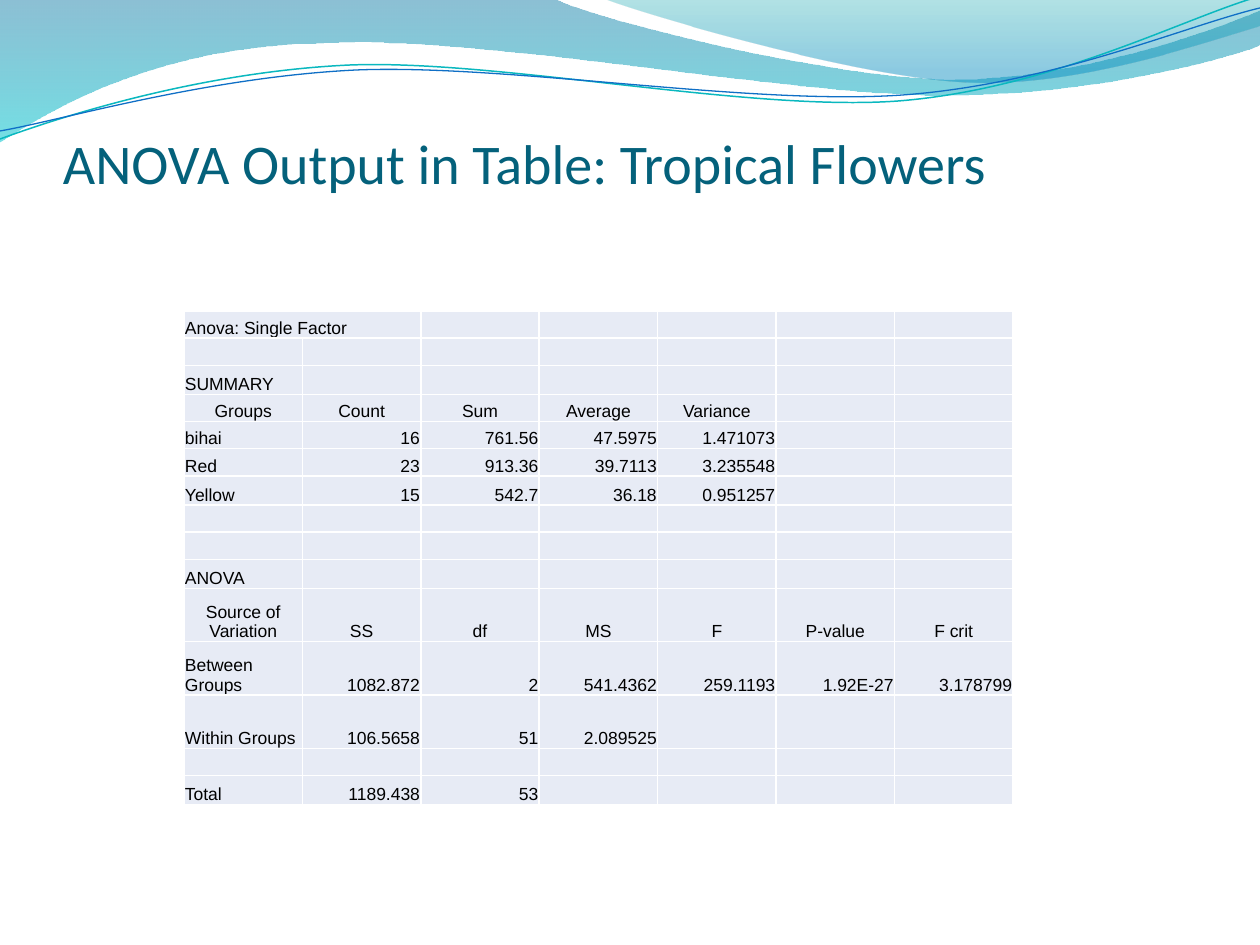
from lxml import etree
from pptx import Presentation
from pptx.dml.color import RGBColor
from pptx.enum.text import MSO_ANCHOR, PP_ALIGN
from pptx.oxml import parse_xml
from pptx.oxml.ns import nsdecls, qn
from pptx.util import Emu, Pt

BOTTOM = MSO_ANCHOR.BOTTOM
LEFT, CENTER, RIGHT = PP_ALIGN.LEFT, PP_ALIGN.CENTER, PP_ALIGN.RIGHT

PX = 914400 / 126

COLORS = {
    "title": "04617B",
    "text": "000000",
    "cell": "E7EBF5",
    "border": "FFFFFF",
    "teal_line": "0AB8BF",
    "blue_line": "0F6FC6",
    "deep_blue": "0074A1",
    "cyan": "00C6CF",
    "teal": "00A1A9",
    "sky": "008BBF",
}

# Each path is a list of steps: one point is a move or line, three a Bézier curve.
# Gradient stops are (position %, colour, opacity %).
WAVES = [
    ([[(0, 0)], [(554, -1)],
      [(600, 21), (837, 79), (955, 79)], [(1075, 79), (1207, 33), (1260, 11)],
      [(1261, 45)],
      [(1239, 55), (1096, 96), (940, 95)], [(784, 95), (481, 35), (324, 43)],
      [(163, 45), (58, 105), (-1, 142)]],
     [(0, "deep_blue", 45), (100, "cyan", 55)]),
    ([[(604, -1)],
      [(641, 14), (859, 78), (969, 82)], [(1079, 87), (1211, 40), (1260, 26)],
      [(1260, 0)]],
     [(0, "teal", 30), (80, "sky", 45)]),
]
STRANDS = [
    ([[(0, 139)], [(60, 117), (199, 72), (349, 65)],
      [(498, 59), (747, 112), (898, 101)], [(1050, 89), (1182, 19), (1257, -3)]],
     "teal_line", 0.85),
    ([[(0, 131)], [(59, 121), (207, 77), (357, 70)],
      [(508, 64), (752, 106), (903, 95)], [(1053, 84), (1185, 26), (1260, 8)]],
     "blue_line", 0.75),
]

SMALL, MEDIUM, TALL = 27, 29, 53
ROWS = [
    (SMALL, ["Anova: Single Factor"]),
    (SMALL, []),
    (MEDIUM, ["SUMMARY"]),
    (SMALL, ["Groups", "Count", "Sum", "Average", "Variance"]),
    (SMALL, ["bihai", "16", "761.56", "47.5975", "1.471073"]),
    (SMALL, ["Red", "23", "913.36", "39.7113", "3.235548"]),
    (MEDIUM, ["Yellow", "15", "542.7", "36.18", "0.951257"]),
    (SMALL, []),
    (SMALL, []),
    (MEDIUM, ["ANOVA"]),
    (TALL, ["Source of Variation", "SS", "df", "MS", "F", "P-value", "F crit"]),
    (TALL, ["Between Groups", "1082.872", "2", "541.4362", "259.1193", "1.92E-27", "3.178799"]),
    (TALL, ["Within Groups", "106.5658", "51", "2.089525"]),
    (SMALL, []),
    (MEDIUM, ["Total", "1189.438", "53"]),
]
HEADINGS = ("Groups", "Source of Variation")
COLUMN_COUNT = 7


def px(value):
    return Emu(round(value * PX))


def rgb(name):
    return RGBColor.from_string(COLORS[name])


def style_span(span, font, size, color):
    span.font.name = font
    span.font.size = Pt(size)
    span.font.color.rgb = rgb(color)


def bend_segments(shape, path):
    """Join the three line segments of each curve step into one Bézier segment."""
    segments = iter(list(shape._element.iter(qn("a:lnTo"))))
    for step in path[1:]:
        lines = [next(segments) for _ in step]
        if len(step) == 3:
            curve = etree.Element(qn("a:cubicBezTo"))
            lines[0].addprevious(curve)
            for line in lines:
                curve.append(line[0])
                line.getparent().remove(line)


def add_outline(page, box, path, close):
    left, top = box[:2]
    points = [(px(left + x), px(top + y)) for step in path for x, y in step]
    builder = page.shapes.build_freeform(*points[0])
    builder.add_line_segments(points[1:], close=close)
    shape = builder.convert_to_shape()
    shape.shadow.inherit = False
    bend_segments(shape, path)
    return shape


def fill_gradient(shape, stops):
    """Fill from top to bottom with partly transparent stops."""
    stop_xml = "".join(
        f'<a:gs pos="{position * 1000}"><a:srgbClr val="{COLORS[color]}">'
        f'<a:alpha val="{opacity * 1000}"/></a:srgbClr></a:gs>'
        for position, color, opacity in stops)
    gradient = parse_xml(f'<a:gradFill {nsdecls("a")} rotWithShape="1"><a:gsLst>{stop_xml}</a:gsLst>'
                         '<a:lin ang="5400000" scaled="0"/></a:gradFill>')
    shape._element.spPr.find(qn("a:custGeom")).addnext(gradient)


def add_wave_header(page, box):
    for path, stops in WAVES:
        wave = add_outline(page, box, path, close=True)
        fill_gradient(wave, stops)
        wave.line.fill.background()
    for path, color, width in STRANDS:
        strand = add_outline(page, box, path, close=False)
        strand.fill.background()
        strand.line.color.rgb = rgb(color)
        strand.line.width = Pt(width)


def add_title(page, box):
    frame = page.shapes.add_textbox(*map(px, box)).text_frame
    frame.word_wrap = True
    frame.vertical_anchor = BOTTOM
    frame.margin_left = frame.margin_right = frame.margin_bottom = 0
    frame.margin_top = px(6)
    frame.text = "ANOVA Output in Table: Tropical Flowers"
    style_span(frame.paragraphs[0].runs[0], "Calibri", 32, "title")


def add_borders(cell):
    properties = cell._tc.get_or_add_tcPr()
    for index, side in enumerate(("lnL", "lnR", "lnT", "lnB")):
        border = etree.Element(qn(f"a:{side}"), w=str(Pt(1)))
        fill = etree.SubElement(border, qn("a:solidFill"))
        etree.SubElement(fill, qn("a:srgbClr"), val=COLORS["border"])
        properties.insert(index, border)


def write_cell(cell, text, align):
    cell.fill.solid()
    cell.fill.fore_color.rgb = rgb("cell")
    add_borders(cell)
    cell.vertical_anchor = BOTTOM
    cell.margin_left = cell.margin_right = cell.margin_top = px(1)
    cell.margin_bottom = 0
    para = cell.text_frame.paragraphs[0]
    if text:
        para.text = text
        para.alignment = align
        style_span(para.runs[0], "Arial", 10, "text")
    else:
        para._p.get_or_add_endParaRPr().set("sz", "1000")


def add_anova_table(page, box):
    table = page.shapes.add_table(len(ROWS), COLUMN_COUNT, *map(px, box)).table
    table.first_row = table.horz_banding = False
    stretch = box[3] / sum(height for height, _ in ROWS)
    for column in table.columns:
        column.width = px(box[2] / COLUMN_COUNT)
    for row_index, (height, values) in enumerate(ROWS):
        table.rows[row_index].height = px(height * stretch)
        is_heading = bool(values) and values[0] in HEADINGS
        for column_index in range(COLUMN_COUNT):
            text = values[column_index] if column_index < len(values) else ""
            align = CENTER if is_heading else RIGHT if column_index else LEFT
            write_cell(table.cell(row_index, column_index), text, align)
    table.cell(0, 0).merge(table.cell(0, 1))


def main():
    deck = Presentation()
    deck.slide_width, deck.slide_height = px(1260), px(945)
    page = deck.slides.add_slide(deck.slide_layouts[6])
    add_wave_header(page, (0, 0, 1260, 142))
    add_title(page, (63, 98, 1134, 98))
    add_anova_table(page, (184, 311, 829, 494))
    deck.save("out.pptx")


if __name__ == "__main__":
    main()
